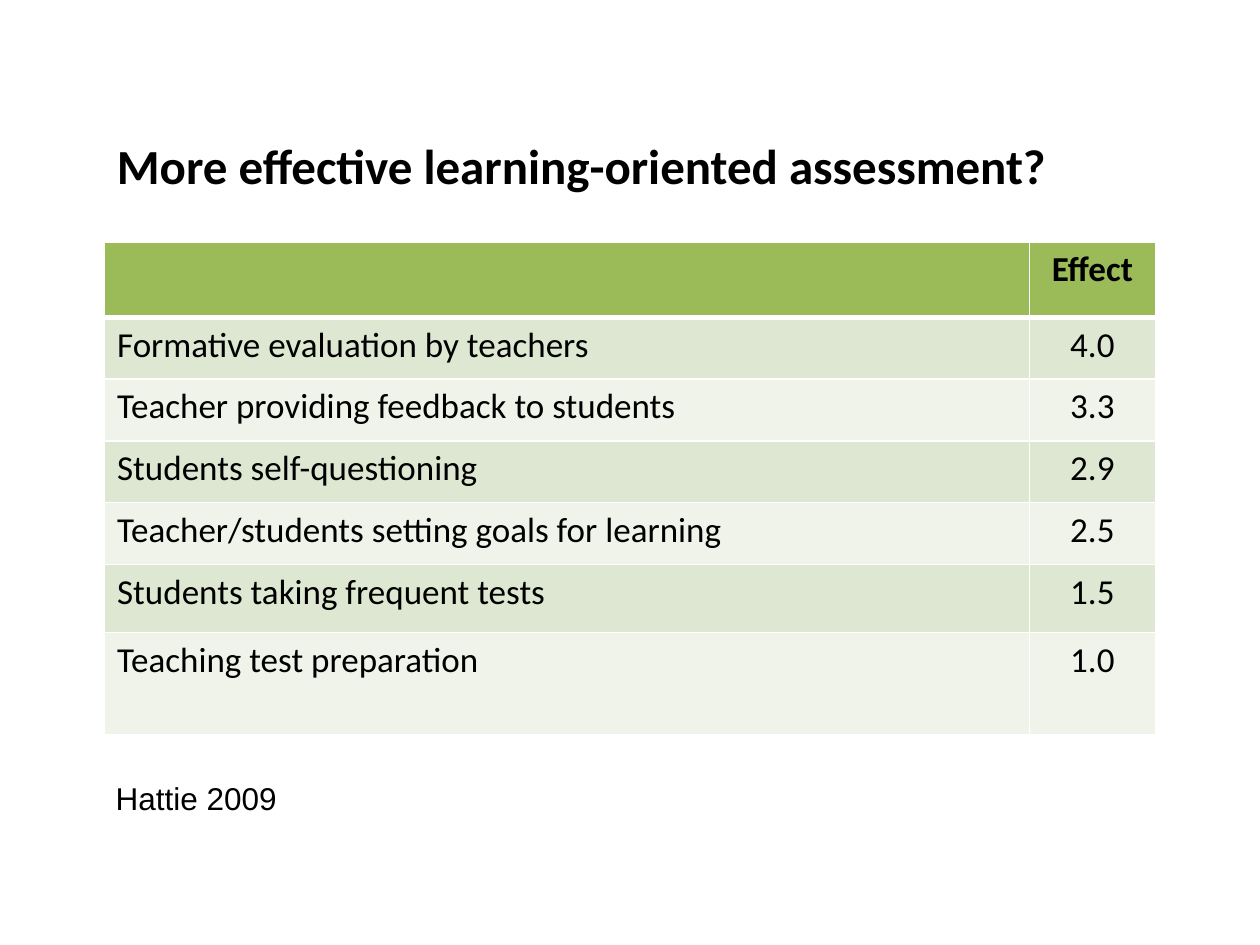
from lxml.etree import SubElement
from pptx import Presentation
from pptx.dml.color import RGBColor
from pptx.enum.text import PP_ALIGN
from pptx.oxml.ns import qn
from pptx.util import Inches, Pt

BLACK, WHITE = "000000", "FFFFFF"
HEADER_FILL, BAND_FILLS = "9BBB59", ("DEE7D1", "EFF3EA")

TITLE_BOX = (0.83, 1.03, 7.74, 0.57)
TABLE_BOX = (0.83, 1.92, 8.34, 3.91)
SOURCE_BOX = (0.82, 6.13, 1.5, 0.4)

EFFECT_WIDTH = 1
ROW_HEIGHTS = (0.6, 0.49, 0.49, 0.49, 0.49, 0.54, 0.81)
ROWS = (
    ("", "Effect"),
    ("Formative evaluation by teachers", "4.0"),
    ("Teacher providing feedback to students", "3.3"),
    ("Students self-questioning", "2.9"),
    ("Teacher/students setting goals for learning", "2.5"),
    ("Students taking frequent tests", "1.5"),
    ("Teaching test preparation", "1.0"),
)


def rgb(color):
    return RGBColor.from_string(color)


def style_font(p, size, name="Calibri", bold=False):
    p.font.size, p.font.name, p.font.bold = Pt(size), name, bold
    p.font.color.rgb = rgb(BLACK)


def add_text(s, box, text, size, **font):
    tf = s.shapes.add_textbox(*map(Inches, box)).text_frame
    tf.word_wrap = True
    p = tf.paragraphs[0]
    p.text = text
    style_font(p, size, **font)


def set_borders(cell, top, bottom):
    """Draw white cell borders; call before filling, as lines precede fills in the XML."""
    tcPr = cell._tc.get_or_add_tcPr()
    for side, width in (("L", 1), ("R", 1), ("T", top), ("B", bottom)):
        ln = SubElement(tcPr, qn(f"a:ln{side}"), w=str(Pt(width)))
        SubElement(SubElement(ln, qn("a:solidFill")), qn("a:srgbClr"), val=WHITE)


def add_effect_table(s, box):
    table = s.shapes.add_table(len(ROWS), 2, *map(Inches, box)).table
    for column, width in zip(table.columns, (box[2] - EFFECT_WIDTH, EFFECT_WIDTH)):
        column.width = Inches(width)
    for i, (values, height) in enumerate(zip(ROWS, ROW_HEIGHTS)):
        table.rows[i].height = Inches(height)
        header = i == 0
        for j, value in enumerate(values):
            cell = table.cell(i, j)
            set_borders(cell, top=3 if i == 1 else 1, bottom=3 if header else 1)
            cell.fill.solid()
            cell.fill.fore_color.rgb = rgb(HEADER_FILL if header else BAND_FILLS[(i - 1) % 2])
            p = cell.text_frame.paragraphs[0]
            p.text = value
            p.alignment = PP_ALIGN.CENTER if j else PP_ALIGN.LEFT
            style_font(p, 20, bold=header)


def main():
    prs = Presentation()
    prs.slide_width, prs.slide_height = Inches(10), Inches(7.5)
    s = prs.slides.add_slide(prs.slide_layouts[6])
    add_effect_table(s, TABLE_BOX)
    add_text(s, TITLE_BOX, "More effective learning-oriented assessment?", 28, bold=True)
    add_text(s, SOURCE_BOX, "Hattie 2009", 18, name="Arial")
    prs.save("out.pptx")


if __name__ == "__main__":
    main()
